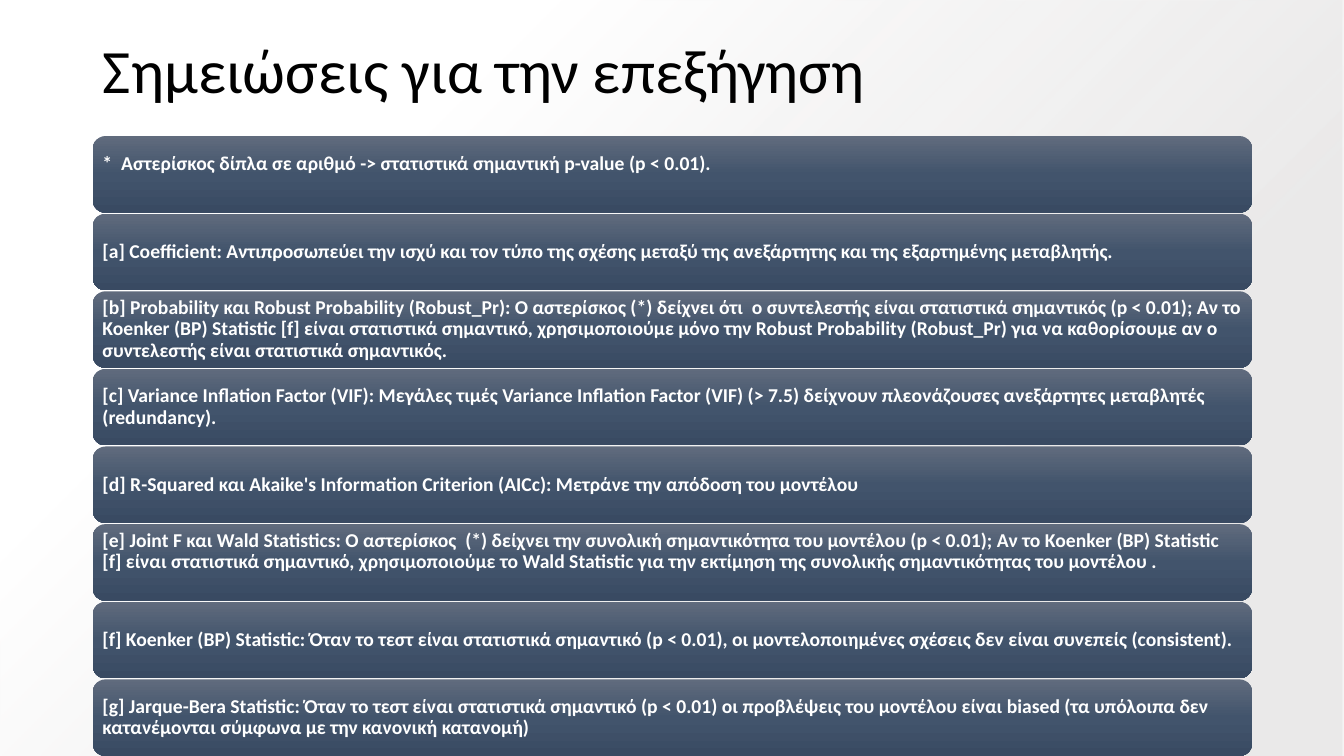
from pptx import Presentation
from pptx.dml.color import RGBColor
from pptx.enum.shapes import MSO_SHAPE as Shape
from pptx.enum.text import MSO_ANCHOR as Anchor, MSO_AUTO_SIZE as Fit, PP_ALIGN as Align
from pptx.oxml import parse_xml
from pptx.oxml.ns import nsdecls, qn
from pptx.util import Inches, Pt

COLORS = {"ink": "000000", "text": "FFFFFF", "top": "606B7D", "mid": "42546C",
          "low": "394A62", "grey": "E7E6E6", "white": "FFFFFF"}
LINEAR = '<a:lin ang="5400000" scaled="0"/>'
RADIAL = '<a:path path="circle"><a:fillToRect l="100000" t="100000"/></a:path>'
CARD = [(0, "top", 100), (50, "mid", 100), (100, "low", 100)]
BACK = [(28, "grey", 84), (74, "white", 100)]
LEFT, WIDTH = 0.92, 11.5
TOP, HEIGHT, STEP = 1.35, 0.76, 0.77
PAD = (0.06, 0.06)
RAISED = (0, 0.21)

NOTES = [
    ("*  Αστερίσκος δίπλα σε αριθμό -> στατιστικά σημαντική p-value (p < 0.01).", RAISED),
    ("[a] Coefficient: Αντιπροσωπεύει την ισχύ και τον τύπο της σχέσης μεταξύ της "
     "ανεξάρτητης και της εξαρτημένης μεταβλητής.", PAD),
    ("[b] Probability και Robust Probability (Robust_Pr): Ο αστερίσκος (*) δείχνει ότι  "
     "ο συντελεστής είναι στατιστικά σημαντικός (p < 0.01); Αν το Koenker (BP) Statistic "
     "[f] είναι στατιστικά σημαντικό, χρησιμοποιούμε μόνο την Robust Probability "
     "(Robust_Pr) για να καθορίσουμε αν ο συντελεστής είναι στατιστικά σημαντικός.", PAD),
    ("[c] Variance Inflation Factor (VIF): Μεγάλες τιμές Variance Inflation Factor (VIF) "
     "(> 7.5) δείχνουν πλεονάζουσες ανεξάρτητες μεταβλητές (redundancy).", PAD),
    ("[d] R-Squared και Akaike's Information Criterion (AICc): Μετράνε την απόδοση του "
     "μοντέλου", PAD),
    ("[e] Joint F και Wald Statistics: Ο αστερίσκος  (*) δείχνει την συνολική "
     "σημαντικότητα του μοντέλου (p < 0.01); Αν το Koenker (BP) Statistic [f] είναι "
     "στατιστικά σημαντικό, χρησιμοποιούμε το Wald Statistic για την εκτίμηση της "
     "συνολικής σημαντικότητας του μοντέλου .", RAISED),
    ("[f] Koenker (BP) Statistic: Όταν το τεστ είναι στατιστικά σημαντικό (p < 0.01), οι "
     "μοντελοποιημένες σχέσεις δεν είναι συνεπείς (consistent).", PAD),
    ("[g] Jarque-Bera Statistic: Όταν το τεστ είναι στατιστικά σημαντικό (p < 0.01) οι "
     "προβλέψεις του μοντέλου είναι biased (τα υπόλοιπα δεν κατανέμονται σύμφωνα με την "
     "κανονική κατανομή)", PAD),
]


def shade(shape, stops, course):
    """Fill a shape with a gradient of (position, colour, opacity) stops."""
    marks = "".join(
        f'<a:gs pos="{pos * 1000}"><a:srgbClr val="{COLORS[name]}">'
        f'<a:alpha val="{alpha * 1000}"/></a:srgbClr></a:gs>'
        for pos, name, alpha in stops)
    shape.fill.background()
    props = shape.element.spPr
    grad = parse_xml(f'<a:gradFill {nsdecls("a")} rotWithShape="1">'
                     f'<a:gsLst>{marks}</a:gsLst>{course}</a:gradFill>')
    props.replace(props.find(qn("a:noFill")), grad)


def add_box(slide, kind, left, top, width, height, stops, course):
    """Add a gradient shape with no line or shadow."""
    box = slide.shapes.add_shape(kind, Inches(left), Inches(top), Inches(width), Inches(height))
    box.shadow.inherit = False
    box.line.fill.background()
    shade(box, stops, course)
    return box


def set_text(frame, text, size, color, bold=False):
    """Write one left-aligned, vertically centred paragraph."""
    frame.text = text
    frame.word_wrap = True
    frame.auto_size = Fit.NONE
    frame.vertical_anchor = Anchor.MIDDLE
    para = frame.paragraphs[0]
    para.alignment = Align.LEFT
    para.line_spacing = 0.9
    font = para.runs[0].font
    font.name = "Calibri"
    font.size = Pt(size)
    font.bold = bold
    font.color.rgb = RGBColor.from_string(COLORS[color])


def add_back(slide):
    """Lay the shaded backdrop behind everything else."""
    back = add_box(slide, Shape.RECTANGLE, 0, 0, 13.33, 7.5, BACK, RADIAL)
    slide.shapes.element.insert(2, back.element)


def add_title(slide, text):
    """Place and format the slide title."""
    title = slide.shapes.title
    title.left, title.top = Inches(LEFT), Inches(0)
    title.width, title.height = Inches(WIDTH), Inches(1.45)
    set_text(title.text_frame, text, 44, "ink")


def add_note(slide, row, text, pads):
    """Add one note card in its row."""
    card = add_box(slide, Shape.ROUNDED_RECTANGLE, LEFT, TOP + row * STEP, WIDTH, HEIGHT,
                   CARD, LINEAR)
    frame = card.text_frame
    frame.margin_left = frame.margin_right = Inches(0.06)
    frame.margin_top, frame.margin_bottom = map(Inches, pads)
    set_text(frame, text, 14, "text", True)


def main():
    """Build and save the slide."""
    deck = Presentation()
    deck.slide_width, deck.slide_height = Inches(13.33), Inches(7.5)
    slide = deck.slides.add_slide(deck.slide_layouts[5])
    add_back(slide)
    add_title(slide, "Σημειώσεις για την επεξήγηση")
    for row, (text, pads) in enumerate(NOTES):
        add_note(slide, row, text, pads)
    deck.save("out.pptx")


if __name__ == "__main__":
    main()
